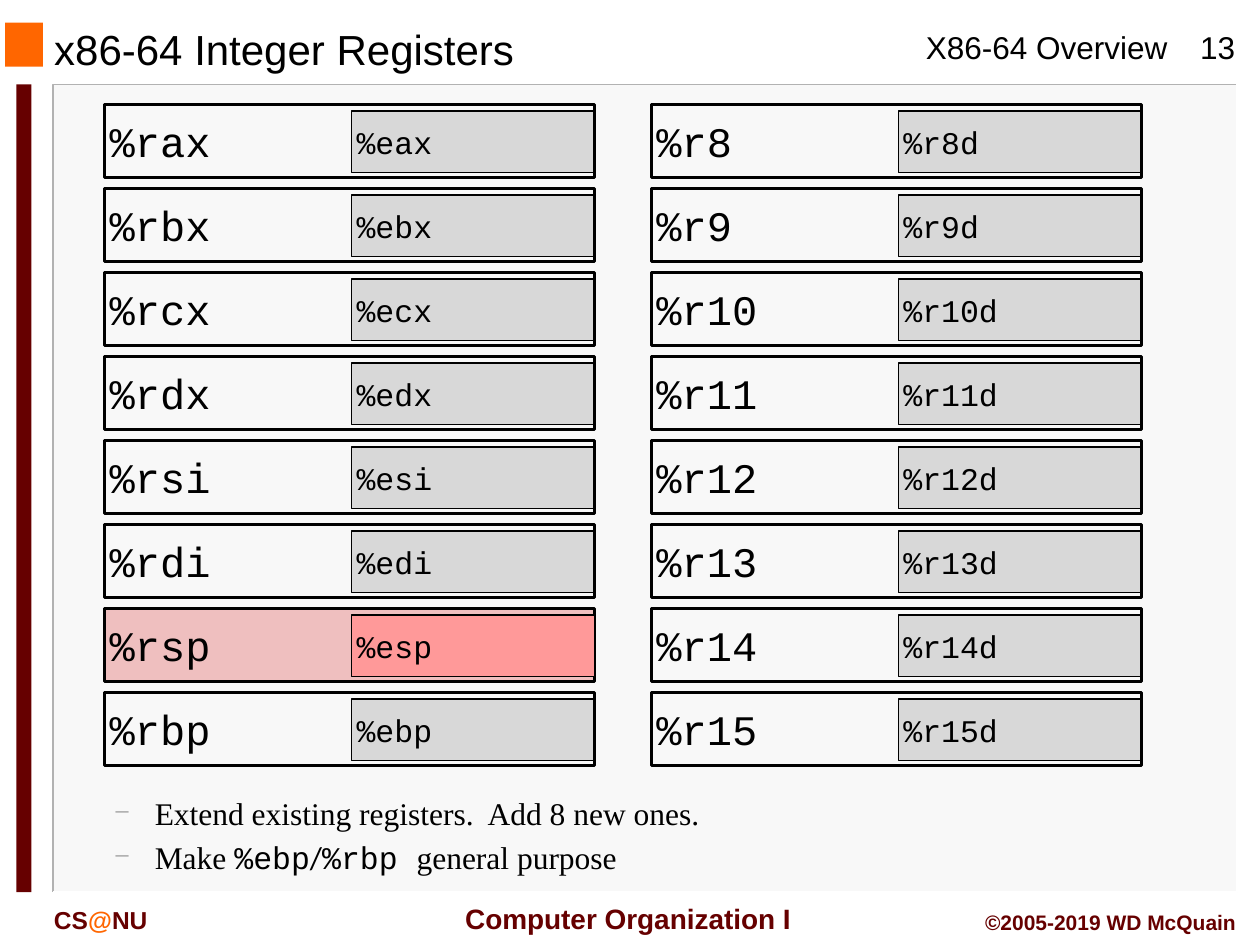
from lxml.etree import SubElement
from pptx import Presentation
from pptx.dml.color import RGBColor
from pptx.enum.shapes import MSO_SHAPE
from pptx.enum.text import MSO_ANCHOR, PP_ALIGN
from pptx.oxml.ns import qn
from pptx.util import Inches, Pt

BLACK = RGBColor(0x00, 0x00, 0x00)
WHITE = RGBColor(0xFF, 0xFF, 0xFF)
PANEL = RGBColor(0xF8, 0xF8, 0xF8)
EDGE = RGBColor(0xB2, 0xB2, 0xB2)
ORANGE = RGBColor(0xFF, 0x66, 0x00)
MAROON = RGBColor(0x66, 0x00, 0x00)
HALF_GRAY = RGBColor(0xD8, 0xD8, 0xD8)
STACK_PINK = RGBColor(0xEF, 0xBF, 0xBF)
STACK_RED = RGBColor(0xFF, 0x99, 0x99)

LEGACY = [("%r" + name, "%e" + name)
          for name in ("ax", "bx", "cx", "dx", "si", "di", "sp", "bp")]
EXTENDED = [(f"%r{n}", f"%r{n}d") for n in range(8, 16)]
STACK_POINTER = "%rsp"
ROW_PITCH = Inches(6) // 9


def style_run(run, size, color=BLACK, font="Arial", bold=False):
    run.font.size = Pt(size)
    run.font.name = font
    run.font.bold = bold
    run.font.color.rgb = color


def add_box(slide, left, top, width, height, fill=None, border=None):
    """Rectangle with an optional fill and an optional black border."""
    box = slide.shapes.add_shape(MSO_SHAPE.RECTANGLE, left, top, width, height)
    box.shadow.inherit = False
    if fill is None:
        box.fill.background()
    else:
        box.fill.solid()
        box.fill.fore_color.rgb = fill
    if border is None:
        box.line.fill.background()
    else:
        box.line.color.rgb = BLACK
        box.line.width = Pt(border)
    return box


def add_label(slide, left, top, width, height, parts, size,
              align=PP_ALIGN.LEFT, bold=False, wrap=True):
    """One-line text box; parts is a list of (text, color)."""
    label = slide.shapes.add_textbox(left, top, width, height)
    label.text_frame.word_wrap = wrap
    line = label.text_frame.paragraphs[0]
    line.alignment = align
    for text, color in parts:
        run = line.add_run()
        run.text = text
        style_run(run, size, color, bold=bold)


def add_panel_edge(slide, points, color):
    builder = slide.shapes.build_freeform(*points[0])
    builder.add_line_segments(points[1:], close=False)
    edge = builder.convert_to_shape()
    edge.shadow.inherit = False
    edge.fill.background()
    edge.line.color.rgb = color
    edge.line.width = Pt(1)


def add_frame(slide, left, top, width, height):
    """Content panel with its lit edges, and the two accent blocks."""
    add_box(slide, left, top, width, height, PANEL)
    right, bottom = left + width, top + height
    add_panel_edge(slide, [(right, top), (left, top), (left, bottom)], EDGE)
    add_panel_edge(slide, [(right, top), (right, bottom), (left, bottom)], WHITE)
    add_box(slide, Inches(0.04), Inches(0.18), Inches(0.3), Inches(0.35), ORANGE)
    add_box(slide, Inches(0.13), top, Inches(0.12), height, MAROON)


def add_header(slide, left, top, width, height):
    title = slide.shapes.title
    title.left, title.top, title.width, title.height = left, top, width, height
    title.text_frame.text = "x86-64 Integer Registers"
    title.text_frame.vertical_anchor = MSO_ANCHOR.MIDDLE
    heading = title.text_frame.paragraphs[0]
    heading.alignment = PP_ALIGN.LEFT
    style_run(heading.runs[0], 24)
    add_label(slide, Inches(7.25), Inches(0.17), Inches(2.15), Inches(0.4),
              [("X86-64 Overview", BLACK)], 18, wrap=False)
    add_label(slide, Inches(9.33), Inches(0.17), Inches(0.67), Inches(0.4),
              [("13", BLACK)], 18, PP_ALIGN.CENTER)


def add_footer(slide, left, top, width):
    add_label(slide, left, top, Inches(1.5), Inches(0.33),
              [("CS", MAROON), ("@", ORANGE), ("NU", MAROON)], 14, bold=True)
    add_label(slide, Inches(3.53), Inches(7.11), Inches(2.91), Inches(0.37),
              [("Computer Organization I", MAROON)], 16, PP_ALIGN.CENTER, True)
    author_width = Inches(2.33)
    add_label(slide, left + width - author_width, Inches(7.17), author_width,
              Inches(0.3), [("©2005-2019 WD McQuain", MAROON)], 12,
              PP_ALIGN.RIGHT, True)


def add_register_box(slide, left, top, width, height, name, size, fill, border):
    box = add_box(slide, left, top, width, height, fill, border)
    frame = box.text_frame
    frame.margin_left = frame.margin_right = Inches(0.04)
    frame.margin_top = frame.margin_bottom = Inches(0.04)
    frame.vertical_anchor = MSO_ANCHOR.MIDDLE
    frame.text = name
    frame.paragraphs[0].alignment = PP_ALIGN.LEFT
    style_run(frame.paragraphs[0].runs[0], size, font="Courier New")


def add_register_column(slide, left, top, width, registers):
    """Stack of 64-bit registers, each holding its 32-bit low half."""
    half_width = Inches(1.93)
    for row, (full_name, half_name) in enumerate(registers):
        row_top = top + row * ROW_PITCH
        is_stack = full_name == STACK_POINTER
        full = (left, row_top, width, Inches(0.58), full_name, 24,
                STACK_PINK if is_stack else None, 2)
        half = (left + width - half_width, row_top + Inches(0.05), half_width,
                Inches(0.49), half_name, 18,
                STACK_RED if is_stack else HALF_GRAY, 1 if is_stack else 0.75)
        # The filled stack pointer must lie behind its half
        for register in ((full, half) if is_stack else (half, full)):
            add_register_box(slide, *register)


def add_dash_bullet(paragraph):
    properties = paragraph._p.get_or_add_pPr()
    properties.set("marL", str(Inches(0.81)))
    properties.set("indent", str(Inches(-0.31)))
    color = SubElement(properties, qn("a:buClr"))
    SubElement(color, qn("a:srgbClr")).set("val", str(EDGE))
    SubElement(properties, qn("a:buSzPct")).set("val", "75000")
    SubElement(properties, qn("a:buChar")).set("char", "–")


def add_notes_list(slide, left, top, width, height):
    serif, mono = "Times New Roman", "Courier New"
    bullets = [
        [("Extend existing registers.  Add 8 new ones.", serif)],
        [("Make ", serif), ("%ebp", mono), ("/", "Calibri"), ("%rbp ", mono),
         ("general purpose", serif)],
    ]
    frame = slide.shapes.add_textbox(left, top, width, height).text_frame
    frame.word_wrap = True
    for index, parts in enumerate(bullets):
        bullet = frame.add_paragraph() if index else frame.paragraphs[0]
        bullet.level = 1
        bullet.space_before = Pt(3.6 if index else 0)
        add_dash_bullet(bullet)
        for text, font in parts:
            run = bullet.add_run()
            run.text = text
            style_run(run, 18, font=font)


def main():
    deck = Presentation()
    deck.slide_width, deck.slide_height = Inches(10), Inches(7.5)
    slide = deck.slides.add_slide(deck.slide_layouts[5])
    add_frame(slide, Inches(0.42), Inches(0.67), Inches(9.4), Inches(6.41))
    add_header(slide, Inches(0.33), Inches(0.2), Inches(6.33), Inches(0.38))
    add_footer(slide, Inches(0.33), Inches(7.13), Inches(9.58))
    for left, registers in ((Inches(0.83), LEGACY), (Inches(5.17), EXTENDED)):
        add_register_column(slide, left, Inches(0.83), Inches(3.89), registers)
    add_notes_list(slide, Inches(0.32), Inches(6.25), Inches(8.02), Inches(0.92))
    deck.save("out.pptx")


if __name__ == "__main__":
    main()
